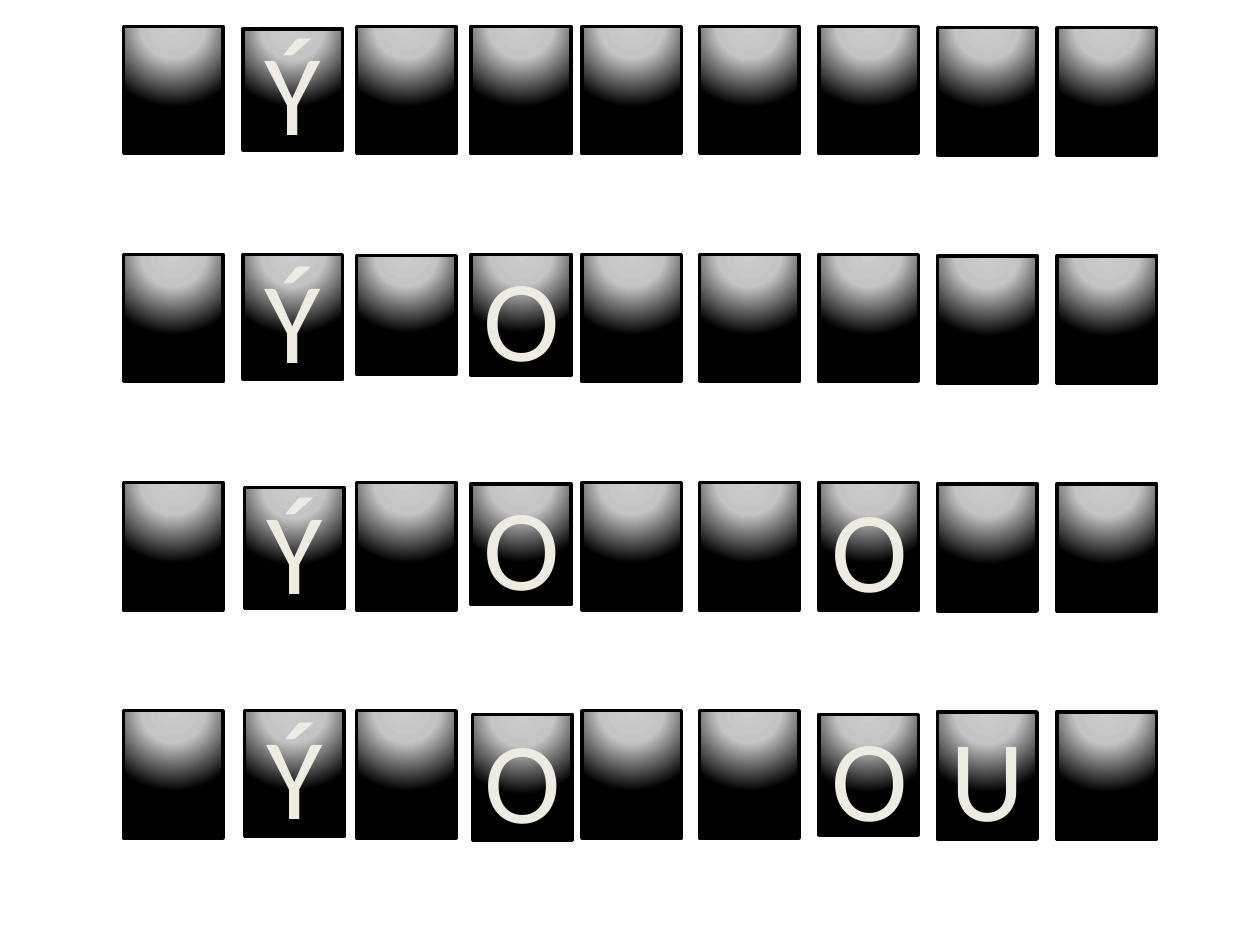
from pptx import Presentation
from pptx.dml.color import RGBColor
from pptx.enum.shapes import MSO_SHAPE
from pptx.enum.text import MSO_ANCHOR, PP_ALIGN
from pptx.oxml import parse_xml
from pptx.oxml.ns import nsdecls
from pptx.util import Inches, Pt

RECTANGLE = MSO_SHAPE.RECTANGLE
MIDDLE = MSO_ANCHOR.MIDDLE
CENTER = PP_ALIGN.CENTER

# Grid of letter tiles, in inches
COLUMNS = [0.98, 1.93, 2.83, 3.74, 4.62, 5.55, 6.5, 7.44, 8.39]
FIRST_ROW, ROW_STEP = 0.21, 1.81
TILE_WIDTH, TILE_HEIGHT = 0.79, 1.01
LOWERED_COLUMNS, LOWERED_BY = (7, 8), 0.01

# Each round of the game; a dot is a tile still hidden
ROUNDS = [".Ý.......", ".Ý.O.....", ".Ý.O..O..", ".Ý.O..OU."]

# Hand-placed tiles: (row, column) -> shift right, shift down, height
ADJUSTED = {
    (0, 1): (0, 0.02, 0.96),
    (1, 1): (0, 0, 0.99),
    (1, 2): (0, 0.01, 0.94),
    (1, 3): (0, 0, 0.96),
    (2, 1): (0.01, 0.04, 0.96),
    (2, 3): (0, 0.01, 0.96),
    (3, 1): (0.01, 0, 1),
    (3, 3): (0.01, 0.03, 1),
    (3, 6): (0, 0.03, 0.96),
}


def color(value):
    return RGBColor.from_string(value)


def write_text(box, text, font="Calibri", size=66, fill="EEECE1", outline="FFFFFF", outline_width=1.45):
    frame = box.text_frame
    frame.vertical_anchor = MIDDLE
    para = frame.paragraphs[0]
    para.alignment = CENTER
    span = para.add_run()
    span.text = text
    span.font.name = font
    span.font.size = Pt(size)
    span.font.color.rgb = color(fill)
    span.font._element.insert(0, parse_xml(
        f'<a:ln {nsdecls("a")} w="{Pt(outline_width)}"><a:solidFill>'
        f'<a:srgbClr val="{outline}"/></a:solidFill></a:ln>'))


class Board:
    stops = [(0, "CCCCCC"), (40, "C4C4C4"), (100, "000000")]
    edge, edge_width = "000000", 2

    def __init__(self, page):
        self.page = page

    def glow(self, box):
        """Fill a box with a round gradient centred on its top edge."""
        stops = "".join(f'<a:gs pos="{share * 1000}"><a:srgbClr val="{tint}"/></a:gs>'
                        for share, tint in self.stops)
        box.fill.background()
        empty_fill = box._element.spPr.find(
            "{http://schemas.openxmlformats.org/drawingml/2006/main}noFill")
        box._element.spPr.replace(empty_fill, parse_xml(
            f'<a:gradFill {nsdecls("a")} rotWithShape="1"><a:gsLst>{stops}</a:gsLst>'
            '<a:path path="circle"><a:fillToRect l="50000" t="-80000" r="50000" b="180000"/>'
            '</a:path></a:gradFill>'))

    def tile(self, row, column, letter):
        drop = LOWERED_BY if column in LOWERED_COLUMNS else 0
        right, down, height = ADJUSTED.get((row, column), (0, drop, TILE_HEIGHT))
        left = COLUMNS[column] + right
        top = FIRST_ROW + row * ROW_STEP + down
        box = self.page.shapes.add_shape(
            RECTANGLE, Inches(left), Inches(top), Inches(TILE_WIDTH), Inches(height))
        box.shadow.inherit = False
        self.glow(box)
        box.line.color.rgb = color(self.edge)
        box.line.width = Pt(self.edge_width)
        if letter != ".":
            write_text(box, letter)


def main():
    deck = Presentation()
    deck.slide_width, deck.slide_height = Inches(10), Inches(7.5)
    blank_layout = deck.slide_layouts[6]
    board = Board(deck.slides.add_slide(blank_layout))

    # One row of tiles per round
    for row, letters in enumerate(ROUNDS):
        for column, letter in enumerate(letters):
            board.tile(row, column, letter)

    deck.save("out.pptx")


if __name__ == "__main__":
    main()
